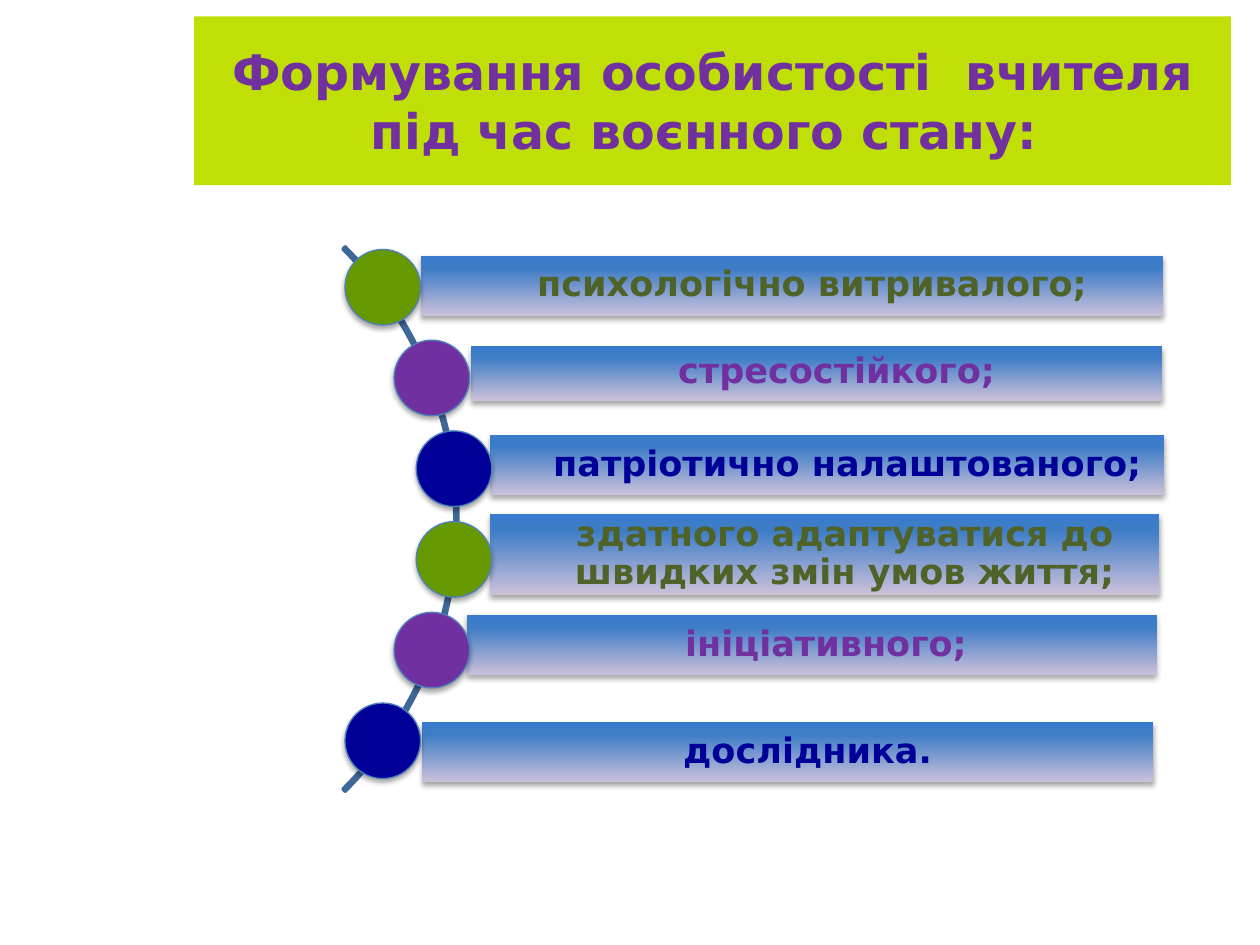
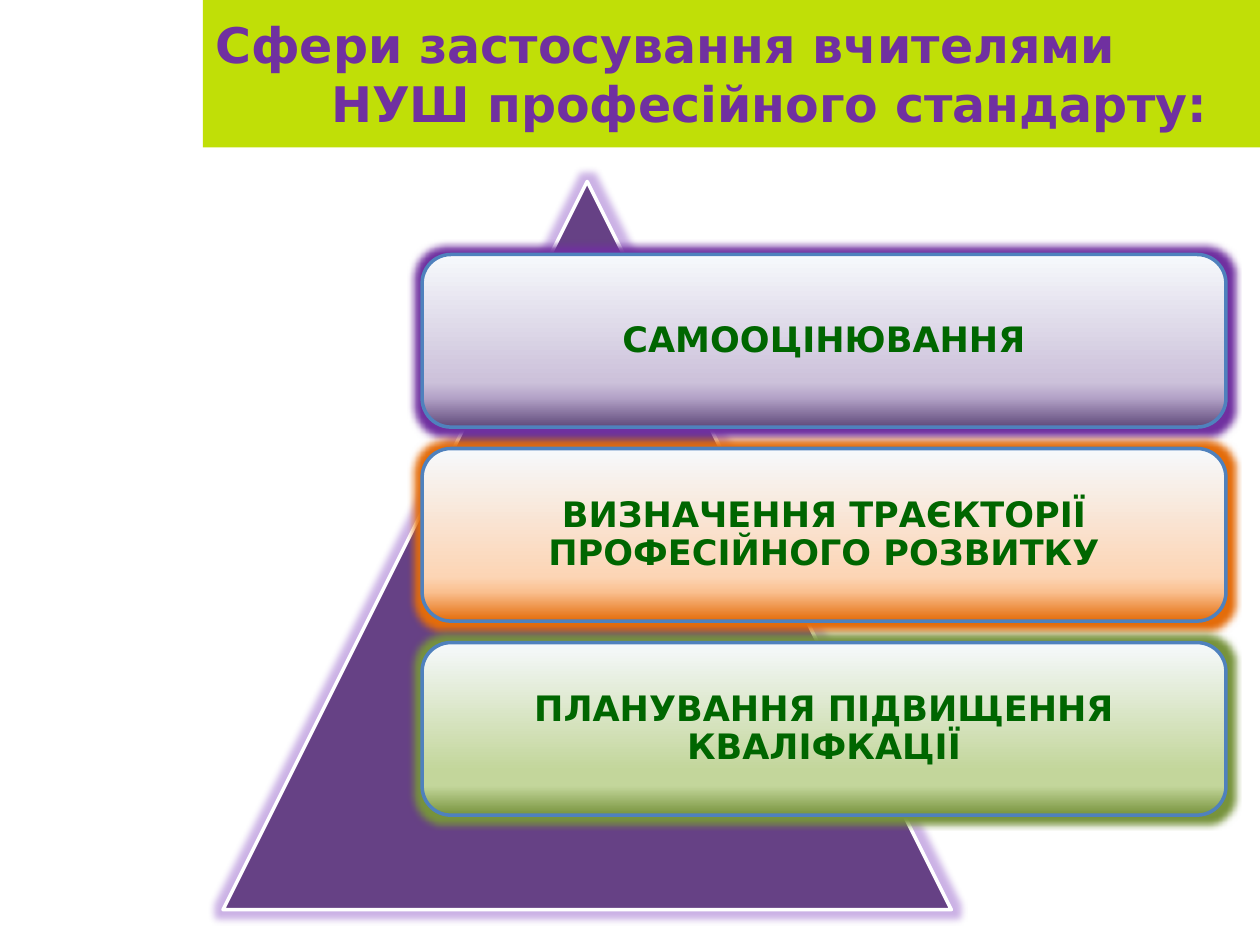
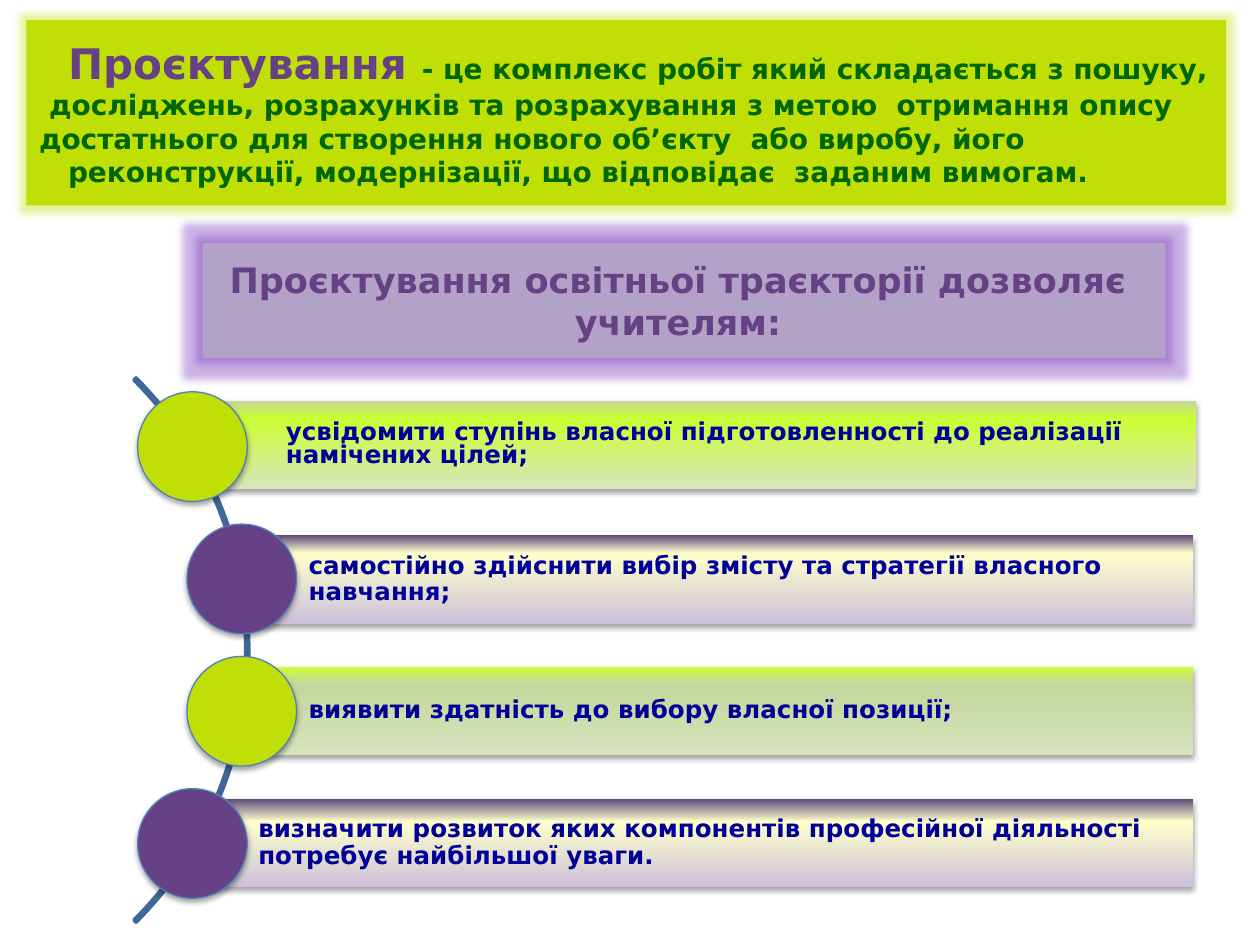
"""Build three slides on the teacher's professional growth."""
from dataclasses import dataclass
from itertools import cycle
from math import sqrt

from lxml import etree
from pptx import Presentation
from pptx import util as u
from pptx.dml.color import RGBColor
from pptx.enum import shapes, text
from pptx.oxml.ns import qn

KIND = shapes.MSO_SHAPE
ALIGN = text.PP_ALIGN


@dataclass(frozen=True)
class Theme:
    """Colours and type sizes of the deck."""
    font: str = "DejaVu Sans"
    lime: str = "C0DF07"
    violet: str = "7030A0"
    plum: str = "664185"
    lilac: str = "B3A2C7"
    green: str = "669900"
    olive: str = "4F6228"
    forest: str = "006600"
    navy: str = "000099"
    edge: str = "4F81BD"
    arc: str = "3F6797"
    white: str = "FFFFFF"
    halo: str = "7F3FBF"
    head: int = 28
    term: int = 24
    label: int = 20
    note: int = 16
    item: int = 14


T = Theme()
BLUE = ((0, "CCC1DA"), (80, "3D7CC7"), (100, "3A7CCB"))


def node(up, tag, **attrs):
    """Add a drawing element with the given attributes."""
    return etree.SubElement(up, qn("a:" + tag), {k: str(v) for k, v in attrs.items()})


def tint(up, hue, alpha=100):
    """Add a colour with its opacity in percent."""
    node(node(up, "srgbClr", val=hue), "alpha", val=alpha * 1000)


def paint(shape, fill=None, line=None, width=0.75, angle=270):
    """Set a plain, graded or empty fill and the outline."""
    if fill is None:
        shape.fill.background()
    elif isinstance(fill, str):
        shape.fill.solid()
        shape.fill.fore_color.rgb = RGBColor.from_string(fill)
    else:
        shape.fill.gradient()
        grad = shape._element.spPr.find(qn("a:gradFill"))
        for kid in list(grad):
            grad.remove(kid)
        stops = node(grad, "gsLst")
        for pos, hue in fill:
            tint(node(stops, "gs", pos=pos * 1000), hue)
        node(grad, "lin", ang=angle * 60000, scaled=0)
    if line:
        shape.line.color.rgb = RGBColor.from_string(line)
        shape.line.width = u.Pt(width)
    else:
        shape.line.fill.background()
    shape.shadow.inherit = False


def effects(shape):
    """Return the effect list of a painted shape."""
    return shape._element.spPr.find(qn("a:effectLst"))


def shade(shape):
    """Drop a soft shadow below the shape."""
    drop = node(effects(shape), "outerShdw", blurRad=u.Pt(3.1), dist=u.Pt(1.8),
                dir=5400000, rotWithShape=0)
    tint(drop, "000000", 35)


def glow(shape, hue, alpha=100):
    """Surround the shape with a glow."""
    tint(node(effects(shape), "glow", rad=u.Pt(8)), hue, alpha)


def draw(slide, kind, box):
    """Add a preset shape in a box given in inches."""
    return slide.shapes.add_shape(kind, *map(u.Inches, box))


def style(run, size, hue):
    """Format one run in the bold deck font."""
    font = run.font
    font.name, font.size, font.bold = T.font, u.Pt(size), True
    font.color.rgb = RGBColor.from_string(hue)


def write(shape, lines, size, hue, align=ALIGN.CENTER, space=1.0,
          inset=(0.1, 0.05, 0.1, 0.05), dents=None):
    """Fill a shape with styled lines, each with its own left indent."""
    frame = shape.text_frame
    frame.word_wrap = True
    frame.auto_size = text.MSO_AUTO_SIZE.NONE
    frame.vertical_anchor = text.MSO_ANCHOR.MIDDLE
    (frame.margin_left, frame.margin_top,
     frame.margin_right, frame.margin_bottom) = map(u.Inches, inset)
    frame.text = "\n".join(lines)
    for para, dent in zip(frame.paragraphs, dents or [0] * len(lines)):
        props = para._p.get_or_add_pPr()
        props.set("marL", str(u.Inches(dent)))
        props.set("indent", "0")
        para.alignment, para.line_spacing = align, space
        for run in para.runs:
            style(run, size, hue)


def banner(slide, box, lines, size=T.head, hue=T.violet, **look):
    """Place the lime title band."""
    title = slide.shapes.title
    title.left, title.top, title.width, title.height = map(u.Inches, box)
    paint(title, T.lime)
    write(title, lines, size, hue, **look)
    return title


def fan(slide, box, rows, dot, pitch, hues, fills, inks, **look):
    """Hang labelled bars and dots on an arc whose ends touch the box's left side."""
    left, top, _, high = box
    rad = high / sqrt(2)
    midx, midy = left - high / 2, top + high / 2
    arc = draw(slide, KIND.BLOCK_ARC, (midx - rad, midy - rad, 2 * rad, 2 * rad))
    for i, val in enumerate((189, 27, 0.004)):
        arc.adjustments[i] = val
    paint(arc, None, T.arc, 2)
    for i, (row, hue, fill, ink) in enumerate(zip(rows, cycle(hues), cycle(fills), cycle(inks))):
        x, y, wide, tall, space, words = row
        bar = draw(slide, KIND.RECTANGLE, (left + x, top + y, wide, tall))
        paint(bar, fill)
        shade(bar)
        write(bar, [words], hue=ink, space=space, **look)
        rise = (i - (len(rows) - 1) / 2) * pitch
        run = sqrt(rad ** 2 - rise ** 2) - 0.01
        ball = draw(slide, KIND.OVAL, (midx + run - dot / 2, midy - 0.04 + rise - dot / 2, dot, dot))
        paint(ball, hue, T.edge)
        shade(ball)


def stack(slide, box, cards):
    """Lay evenly spaced cards over a triangle."""
    left, top, _, _ = box
    peak = draw(slide, KIND.ISOSCELES_TRIANGLE, box)
    paint(peak, T.plum, T.white, 2)
    glow(peak, T.halo, 40)
    for i, (words, mid, low, foot, halo) in enumerate(cards):
        card = draw(slide, KIND.ROUNDED_RECTANGLE, (left + 1.58, top + 0.58 + 1.54 * i, 6.38, 1.37))
        paint(card, ((0, "F6F9FC"), (74, mid), (83, low), (100, foot)), T.edge, 2, 90)
        glow(card, halo)
        write(card, [words], T.label, T.forest, space=0.9, inset=[0.08] * 4)


def traits(slide):
    """Show the traits of a teacher in wartime."""
    banner(slide, (1.54, 0.13, 8.23, 1.34),
           ["Формування особистості  вчителя під час воєнного стану: "])
    rows = (
        (0.60, 0.07, 5.89, 0.48, 0.8, "психологічно витривалого;"),
        (1.00, 0.79, 5.48, 0.43, 0.8, "стресостійкого;"),
        (1.15, 1.49, 5.35, 0.48, 0.9, "патріотично налаштованого;"),
        (1.15, 2.12, 5.31, 0.64, 0.9, "здатного адаптуватися до швидких змін умов життя;"),
        (0.97, 2.92, 5.47, 0.48, 0.9, "ініціативного; "),
        (0.61, 3.77, 5.80, 0.48, 0.9, "дослідника."),
    )
    fan(slide, (2.74, 1.96, 6.5, 4.32), rows, 0.6, 0.72,
        (T.green, T.violet, T.navy), (BLUE,), (T.olive, T.violet, T.navy),
        size=T.label, inset=(0.38, 0.06, 0.06, 0.06))


def spheres(slide):
    """Show where the professional standard is used."""
    banner(slide, (1.61, 0, 8.39, 1.17),
           ["Сфери застосування вчителями", "НУШ професійного стандарту:"],
           align=ALIGN.LEFT, dents=(0, 0.92))
    stack(slide, (1.77, 1.44, 5.78, 5.78), (
        ("САМООЦІНЮВАННЯ", "CCC1DA", T.lilac, "604A7B", T.violet),
        ("ВИЗНАЧЕННЯ ТРАЄКТОРІЇ ПРОФЕСІЙНОГО РОЗВИТКУ", "FCD5B5", "FAC090", "E46C0A", "E46C0A"),
        ("ПЛАНУВАННЯ ПІДВИЩЕННЯ КВАЛІФКАЦІЇ", "C3D69B", "C3D69B", "77933C", "77933C"),
    ))


def design(slide):
    """Define design and list what it lets teachers do."""
    title = banner(slide, (0.21, 0.16, 9.52, 1.47), [
        "Проєктування ",
        "досліджень, розрахунків та розрахування з метою  отримання опису",
        "достатнього для створення нового об’єкту  або виробу, його",
        "реконструкції, модернізації, що відповідає  заданим вимогам.",
    ], T.note, T.forest, align=ALIGN.LEFT, dents=(0.23, 0.08, 0, 0.23))
    glow(title, T.lime, 40)
    first = title.text_frame.paragraphs[0]
    style(first.runs[0], T.term, T.plum)
    rest = first.add_run()
    rest.text = "- це комплекс робіт який складається з пошуку,"
    style(rest, T.note, T.forest)

    lead = draw(slide, KIND.RECTANGLE, (1.61, 1.93, 7.64, 0.91))
    paint(lead, T.lilac)
    glow(lead, T.halo, 40)
    write(lead, ["Проєктування освітньої траєкторії дозволяє  учителям: "], T.label, T.plum)

    rows = (
        (0.64, 0.18, 7.77, 0.7, 0.8,
         "усвідомити ступінь власної підготовленності до реалізації намічених цілей;"),
        (0.82, 1.25, 7.57, 0.7, 0.9,
         "самостійно здійснити вибір змісту та стратегії власного навчання;"),
        (0.82, 2.29, 7.57, 0.7, 0.9, "виявити здатність до вибору власної позиції;"),
        (0.42, 3.34, 7.97, 0.7, 0.9,
         "визначити розвиток яких компонентів професійної діяльності потребує найбільшої уваги."),
    )
    fills = (
        ((0, "D7E4BD"), (80, "CCFF33"), (100, "C3D69B")),
        ((0, "CCC1DA"), (80, "FFFFCC"), (100, "604A7B")),
        ((0, "D7E4BD"), (80, "C3D69B"), (100, "CCFF33")),
        ((0, "CCC1DA"), (74, "FFFFCC"), (100, "604A7B")),
    )
    fan(slide, (1.08, 3.0, 8.41, 4.32), rows, 0.87, 1.05, (T.lime, T.plum), fills, (T.navy,),
        size=T.item, align=ALIGN.LEFT, inset=(0.55, 0.04, 0.04, 0.04))


def main():
    """Build and save the deck."""
    deck = Presentation()
    deck.slide_width, deck.slide_height = u.Inches(10), u.Inches(7.5)
    for build in (traits, spheres, design):
        build(deck.slides.add_slide(deck.slide_layouts[5]))
    deck.save("out.pptx")


if __name__ == "__main__":
    main()
